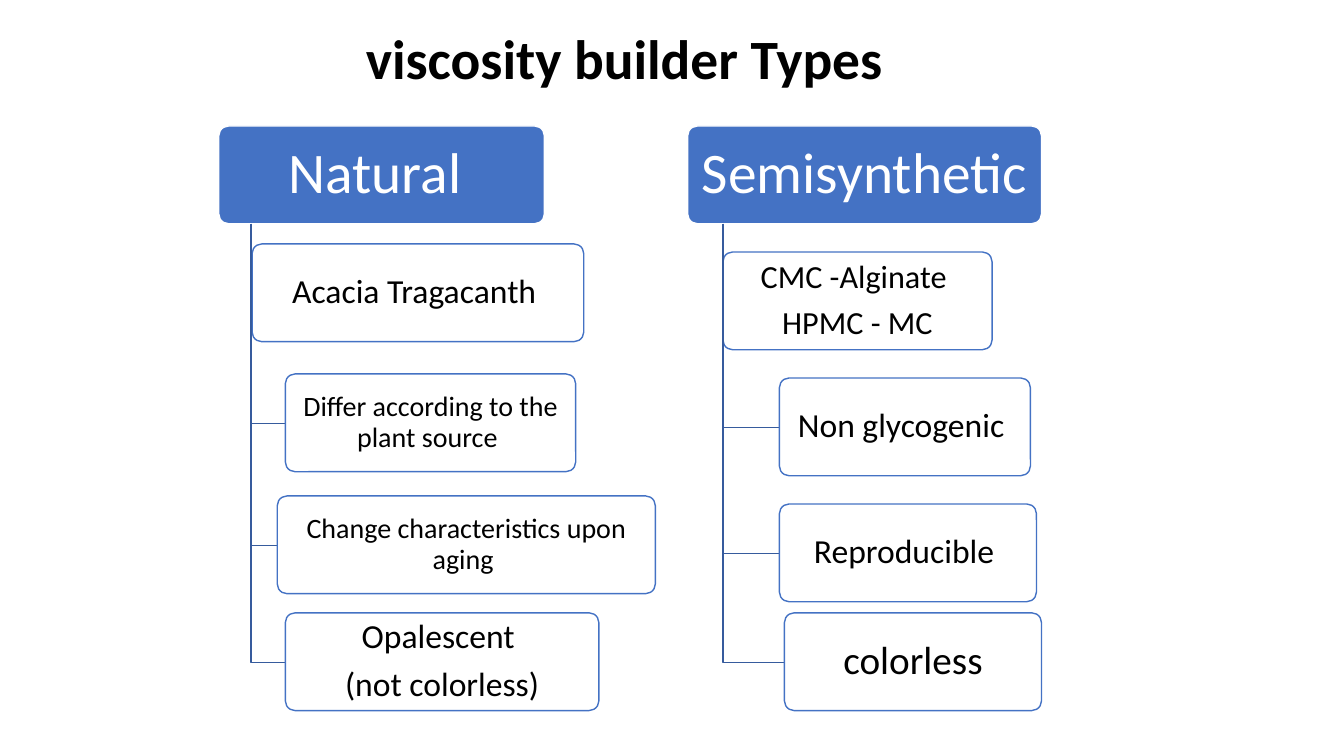
from lxml.etree import SubElement
from pptx import Presentation
from pptx.dml.color import RGBColor
from pptx.enum.shapes import MSO_SHAPE as SHAPE
from pptx.enum.text import MSO_ANCHOR as ANCHOR, PP_ALIGN as ALIGN
from pptx.oxml.ns import qn
from pptx.util import Pt

PX = 9144
BOX_H = 97
COLORS = {"blue": "4472C4", "spine": "365B9D", "white": "FFFFFF", "black": "000000"}

NATURAL = [
    (1, 117, 329, 24, ["Acacia Tragacanth "]),
    (34, 246, 288, 20, ["Differ according to the plant source "]),
    (26, 367, 375, 20, ["Change characteristics upon aging "]),
    (34, 483, 311, 24, ["Opalescent ", "(not colorless)"]),
]
SEMISYNTHETIC = [
    (0, 125, 267, 23, ["CMC -Alginate ", "HPMC - MC"]),
    (56, 250, 249, 24, ["Non glycogenic "]),
    (56, 375, 255, 24, ["Reproducible "]),
    (61, 483, 255, 28, ["colorless"]),
]


def color(name):
    """Return the named colour."""
    return RGBColor.from_string(COLORS[name])


def place(sp, x, y, w, h):
    """Move and size a shape in px."""
    sp.left, sp.top, sp.width, sp.height = (v * PX for v in (x, y, w, h))


def write(tf, lines, size, ink, bold=False, after=0.35):
    """Fill a text frame with centred paragraphs."""
    tf.word_wrap = True
    tf.vertical_anchor = ANCHOR.MIDDLE
    for i, line in enumerate(lines):
        p = tf.paragraphs[0] if i == 0 else tf.add_paragraph()
        p.text = line
        p.alignment = ALIGN.CENTER
        p.line_spacing = 0.9
        p.space_before = Pt(0)
        p.space_after = Pt(round(size * after, 1))
        p.font.name = "Calibri"
        p.font.size = Pt(size)
        p.font.bold = bold
        p.font.color.rgb = color(ink)


def add_title(s, text, x, y, w, h):
    """Place and format the slide title."""
    place(s.shapes.title, x, y, w, h)
    write(s.shapes.title.text_frame, [text], 39.6, "black", bold=True, after=0)


def add_card(s, x, y, w, lines, size, fill, line, ink, pad):
    """Draw a rounded box with centred text."""
    sp = s.shapes.add_shape(SHAPE.ROUNDED_RECTANGLE, x * PX, y * PX, w * PX, BOX_H * PX)
    sp.adjustments[0] = 0.1
    sp.shadow.inherit = False
    sp.fill.solid()
    sp.fill.fore_color.rgb = color(fill)
    sp.line.color.rgb = color(line)
    sp.line.width = Pt(1)
    tf = sp.text_frame
    tf.margin_left = tf.margin_right = pad[0] * PX
    tf.margin_top = tf.margin_bottom = pad[1] * PX
    write(tf, lines, size, ink)
    return sp


def add_elbow(s, x, y, w, h):
    """Draw a line down and then right to an item."""
    path = s.shapes.build_freeform(x, y, scale=PX)
    path.add_line_segments([(x, y + h), (x + w, y + h)], close=False)
    sp = path.convert_to_shape()
    sp.shadow.inherit = False
    sp.fill.background()
    sp.line.color.rgb = color("spine")
    sp.line.width = Pt(1)


def add_column(s, x, y, w, heading, items):
    """Draw a heading with its items hanging from a spine."""
    add_card(s, x, y, w, [heading], 41, "blue", "white", "white", (9, 6))
    spine = x + w // 10
    for indent, dy, width, size, lines in items:
        if indent:
            add_elbow(s, spine, y + BOX_H, indent, dy - BOX_H // 2)
        sp = add_card(s, spine + indent, y + dy, width, lines, size,
                      "white", "blue", "black", (5, 3))
        fill = sp.fill._xPr.find(qn("a:solidFill"))
        SubElement(fill[0], qn("a:alpha"), val="90000")


def main():
    """Build and save the slide."""
    prs = Presentation()
    prs.slide_width, prs.slide_height = 1333 * PX, 750 * PX
    s = prs.slides.add_slide(prs.slide_layouts[5])
    add_title(s, "viscosity builder Types ", 217, 30, 817, 62)
    add_column(s, 217, 125, 323, "Natural ", NATURAL)
    add_column(s, 682, 125, 351, "Semisynthetic ", SEMISYNTHETIC)
    prs.save("out.pptx")


if __name__ == "__main__":
    main()
